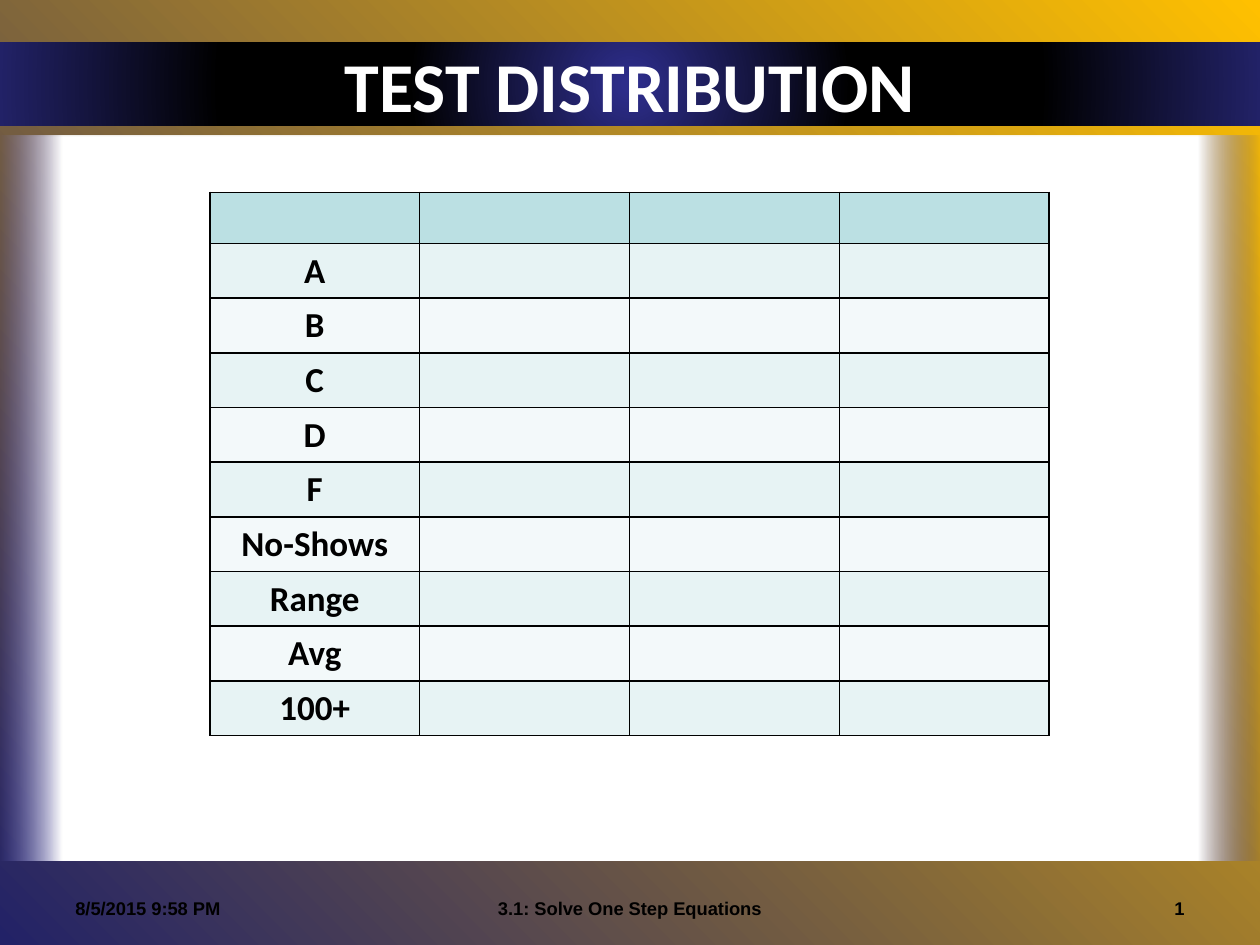
from lxml import etree
from pptx import Presentation
from pptx.dml.color import RGBColor
from pptx.enum.shapes import MSO_SHAPE
from pptx.enum.text import MSO_ANCHOR, PP_ALIGN
from pptx.oxml import parse_xml
from pptx.oxml.ns import nsdecls, qn
from pptx.util import Cm, Pt

LEFT, CENTER, RIGHT = PP_ALIGN.LEFT, PP_ALIGN.CENTER, PP_ALIGN.RIGHT
TOP, MIDDLE = MSO_ANCHOR.TOP, MSO_ANCHOR.MIDDLE
RECTANGLE = MSO_SHAPE.RECTANGLE

BLACK = RGBColor(0x00, 0x00, 0x00)
WHITE = RGBColor(0xFF, 0xFF, 0xFF)
GOLD = RGBColor(0xFF, 0xC0, 0x00)
NAVY = RGBColor(0x22, 0x22, 0x67)
INDIGO = RGBColor(0x2D, 0x2D, 0x8A)
LAVENDER = RGBColor(0x6B, 0x6B, 0xCF)
HEADER_TEAL = RGBColor(0xBB, 0xE0, 0xE3)
ODD_TEAL = RGBColor(0xE7, 0xF3, 0xF4)
EVEN_TEAL = RGBColor(0xF3, 0xF9, 0xFA)

CIRCLE = ('<a:path path="circle"><a:fillToRect l="50000" t="50000" '
          'r="50000" b="50000"/></a:path>')
ROW_LABELS = ["", "A", "B", "C", "D", "F", "No-Shows", "Range", "Avg", "100+"]


def linear(degrees):
    return f'<a:lin ang="{degrees * 60000}" scaled="0"/>'


def write_text(frame, text, font="Arial", size=10.5, color=BLACK, align=LEFT):
    para = frame.paragraphs[0]
    para.alignment = align
    span = para.add_run()
    span.text = text
    span.font.name = font
    span.font.size = Pt(size)
    span.font.bold = True
    span.font.color.rgb = color


def apply_gradient(owner, fill, stops, direction):
    fill.gradient()
    stop_xml = "".join(
        f'<a:gs pos="{position * 1000}"><a:srgbClr val="{color}">'
        f'<a:alpha val="{opacity * 1000}"/></a:srgbClr></a:gs>'
        for position, color, opacity in stops)
    gradient = parse_xml(
        f'<a:gradFill {nsdecls("a")} rotWithShape="1">'
        f'<a:gsLst>{stop_xml}</a:gsLst>{direction}</a:gradFill>')
    current = next(owner.element.iter(qn("a:gradFill")))
    current.getparent().replace(current, gradient)


def draw_borders(cell, color=BLACK, width=Pt(1)):
    properties = cell._tc.get_or_add_tcPr()
    for side in ("lnL", "lnR", "lnT", "lnB"):
        line = etree.SubElement(properties, qn(f"a:{side}"), w=str(width))
        solid = etree.SubElement(line, qn("a:solidFill"))
        etree.SubElement(solid, qn("a:srgbClr"), val=str(color))


class SlideBuilder:
    heading_font = "Calibri"

    def __init__(self, page):
        self.page = page

    def background(self, stops, direction):
        apply_gradient(self.page, self.page.background.fill, stops, direction)

    def band(self, top, height, stops, direction):
        shape = self.page.shapes.add_shape(
            RECTANGLE, 0, Cm(top), Cm(25.4), Cm(height))
        shape.shadow.inherit = False
        shape.line.fill.background()
        apply_gradient(shape, shape.fill, stops, direction)

    def text(self, left, top, width, height, text, anchor=TOP, **style):
        box = self.page.shapes.add_textbox(
            Cm(left), Cm(top), Cm(width), Cm(height))
        box.text_frame.word_wrap = True
        box.text_frame.vertical_anchor = anchor
        write_text(box.text_frame, text, **style)

    def table(self, left, top, column_width, row_height, labels, columns):
        table = self.page.shapes.add_table(
            len(labels), columns, Cm(left), Cm(top),
            Cm(column_width * columns), Cm(row_height * len(labels))).table
        for column in table.columns:
            column.width = Cm(column_width)
        for index, label in enumerate(labels):
            table.rows[index].height = Cm(row_height)
            banding = ODD_TEAL if index % 2 else EVEN_TEAL
            for cell in table.rows[index].cells:
                draw_borders(cell)
                cell.fill.solid()
                cell.fill.fore_color.rgb = banding if index else HEADER_TEAL
            if label:
                write_text(table.cell(index, 0).text_frame, label,
                           font=self.heading_font, size=20, align=CENTER)


def main():
    deck = Presentation()
    deck.slide_width, deck.slide_height = Cm(25.4), Cm(19.05)
    builder = SlideBuilder(deck.slides.add_slide(deck.slide_layouts[6]))

    builder.background([(0, GOLD, 100), (100, NAVY, 100)], linear(135))
    builder.band(0.85, 1.69, [(1, INDIGO, 100), (35, BLACK, 100),
                              (65, BLACK, 100), (100, NAVY, 100)], CIRCLE)
    builder.band(2.74, 14.61, [(0, LAVENDER, 0), (5, WHITE, 100),
                               (95, WHITE, 100), (100, INDIGO, 0)], linear(0))
    builder.text(1.27, 0.85, 22.86, 1.69, "TEST DISTRIBUTION", anchor=MIDDLE,
                 font=builder.heading_font, size=40, color=WHITE, align=CENTER)
    for left, width, text, align in (
            (1.27, 5.92, "8/5/2015 9:58 PM", LEFT),
            (7.32, 10.76, "3.1: Solve One Step Equations", CENTER),
            (18.21, 5.92, "1", RIGHT)):
        builder.text(left, 17.96, width, 0.89, text, align=align)
    builder.table(4.23, 3.88, 4.23, 1.03, ROW_LABELS, columns=4)

    deck.save("out.pptx")


if __name__ == "__main__":
    main()
